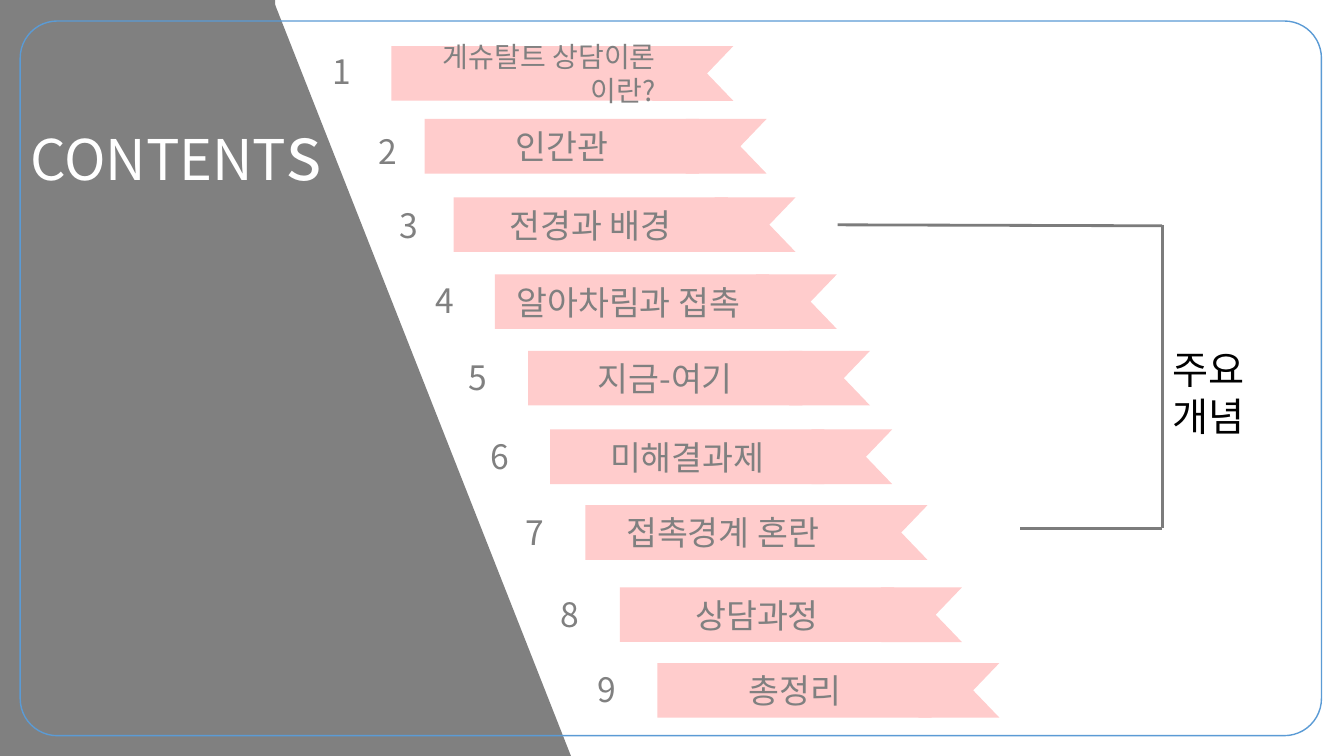
import pptx
import pptx.dml.color
import pptx.enum.shapes
import pptx.enum.text
import pptx.oxml.ns
import pptx.util
from lxml import etree

Pt = pptx.util.Pt
RGB = pptx.dml.color.RGBColor
SHAPE = pptx.enum.shapes.MSO_SHAPE
STRAIGHT = pptx.enum.shapes.MSO_CONNECTOR.STRAIGHT
ALIGN = pptx.enum.text.PP_ALIGN
ANCHOR = pptx.enum.text.MSO_ANCHOR
GROW = pptx.enum.text.MSO_AUTO_SIZE.SHAPE_TO_FIT_TEXT
qn = pptx.oxml.ns.qn

GRAY = RGB(0x80, 0x80, 0x80)
PINK = RGB(0xFF, 0xCC, 0xCC)
BLUE = RGB(0x5B, 0x9B, 0xD5)
BRACKET = RGB(0x7C, 0x7C, 0x7C)
WHITE = RGB(0xFF, 0xFF, 0xFF)
BLACK = RGB(0, 0, 0)
FONT = "Noto Sans CJK KR"

RIBBON_WIDTH, RIBBON_HEIGHT = 196, 39
TAIL_OFFSET, TAIL_WIDTH = 168, 76.3

# Each entry: text, ribbon left, ribbon top, number left, number top
ENTRIES = [
    ("게슈탈트 상담이론 이란?", 279.5, 33, 230.4, 33),
    ("인간관", 303.3, 85, 263.5, 90),
    ("전경과 배경", 324, 141, 278.6, 142.5),
    ("알아차림과 접촉 ", 353.5, 196, 303.8, 196.7),
    ("지금-여기", 377.2, 250.6, 327.6, 251.4),
    ("미해결과제", 393, 306.8, 343.4, 308),
    ("접촉경계 혼란", 418.2, 360.9, 368.6, 362),
    ("상담과정", 442.8, 419.6, 393.1, 420.5),
    ("총정리", 469.6, 473.6, 419.8, 474.5),
]


def add_run(p, text, size, color):
    r = p.add_run()
    r.text = text
    r.font.size = Pt(size)
    r.font.name = FONT
    r.font.color.rgb = color
    ea = etree.SubElement(r.font._element, qn("a:ea"))
    ea.set("typeface", FONT)


def add_block(shapes, kind, box, fill=None, line=None, adj=None):
    sp = shapes.add_shape(kind, *map(Pt, box))
    sp.shadow.inherit = False
    if fill is None:
        sp.fill.background()
    else:
        sp.fill.solid()
        sp.fill.fore_color.rgb = fill
    if line is None:
        sp.line.fill.background()
    else:
        sp.line.color.rgb = line
        sp.line.width = Pt(1)
    if adj is not None:
        sp.adjustments[0] = adj
    return sp


def add_label(shapes, text, box, size, color):
    sp = shapes.add_textbox(*map(Pt, box))
    tf = sp.text_frame
    tf.word_wrap = True
    tf.auto_size = GROW
    add_run(tf.paragraphs[0], text, size, color)


def add_line(shapes, x1, y1, x2, y2):
    cxn = shapes.add_connector(STRAIGHT, Pt(x1), Pt(y1), Pt(x2), Pt(y2))
    cxn.line.color.rgb = BRACKET
    cxn.line.width = Pt(2)
    etree.SubElement(cxn._element.spPr, qn("a:effectLst"))


def add_entry(slide, number, text, x, y, number_x, number_y):
    shapes = slide.shapes.add_group_shape().shapes
    tail = add_block(shapes, SHAPE.CHEVRON,
                     (x + TAIL_OFFSET, y, TAIL_WIDTH, RIBBON_HEIGHT), PINK, adj=0.481)
    tail._element.spPr.find(qn("a:xfrm")).set("flipH", "1")
    ribbon = add_block(shapes, SHAPE.RECTANGLE, (x, y, RIBBON_WIDTH, RIBBON_HEIGHT), PINK)
    tf = ribbon.text_frame
    tf.word_wrap = True
    tf.vertical_anchor = ANCHOR.MIDDLE
    p = tf.paragraphs[0]
    first = number == 1
    p.alignment = ALIGN.RIGHT if first else ALIGN.CENTER
    add_run(p, text, 20 if first else 24, GRAY)
    add_label(shapes, str(number), (number_x, number_y, 41 if first else 32.4, 36), 24, GRAY)


def set_title(slide):
    sp = slide.shapes.title
    sp.left, sp.top, sp.width, sp.height = map(Pt, (14.4, 71.3, 229, 72.7))
    tf = sp.text_frame
    tf.word_wrap = True
    tf.auto_size = GROW
    tf.vertical_anchor = ANCHOR.TOP
    p = tf.paragraphs[0]
    p.alignment = ALIGN.LEFT
    add_run(p, "CONTENT", 40, WHITE)
    add_run(p, "s", 54, WHITE)
    sp._element.getparent().append(sp._element)


def add_bracket(slide):
    shapes = slide.shapes.add_group_shape().shapes
    add_line(shapes, 598.3, 160.6, 830.2, 161.3)
    add_line(shapes, 830.2, 160.6, 830.2, 377.3)
    add_line(shapes, 728.6, 377.3, 830.2, 377.3)
    add_label(shapes, "주요 개념", (830.2, 243.4, 115.2, 41), 28, BLACK)


def main():
    prs = pptx.Presentation()
    prs.slide_width, prs.slide_height = Pt(960), Pt(540)
    slide = prs.slides.add_slide(prs.slide_layouts[5])
    add_block(slide.shapes, SHAPE.RECTANGLE, (0, 0, 196.6, 540), GRAY)
    add_block(slide.shapes, SHAPE.ISOSCELES_TRIANGLE, (167.8, 0, 240, 540), GRAY, adj=0.114)
    set_title(slide)
    add_block(slide.shapes, SHAPE.ROUNDED_RECTANGLE, (14.4, 15, 929.5, 510.5),
              line=BLUE, adj=0.052)
    for number, entry in enumerate(ENTRIES, 1):
        add_entry(slide, number, *entry)
    add_bracket(slide)
    prs.save("out.pptx")


if __name__ == "__main__":
    main()
